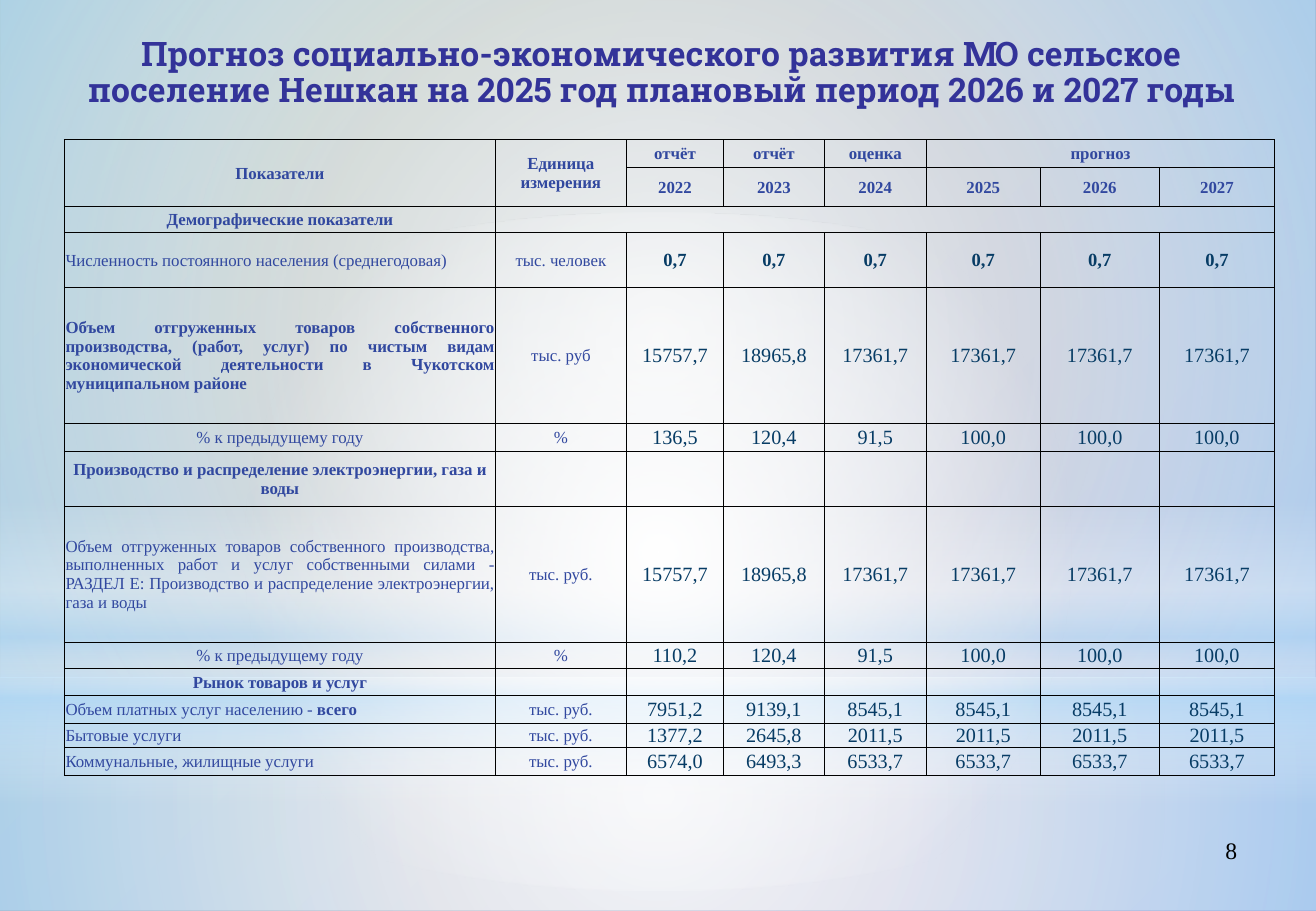
"""Builds the slide with the forecast table of the Neshkan settlement."""
from lxml import etree
from pptx import Presentation, util as u
from pptx.dml import color
from pptx.enum import shapes, text
from pptx.oxml import ns

HUES = {"title": "333399", "label": "31489F", "value": "073C65", "line": "000000",
        "white": "FFFFFF", "sky": "B4DCFA", "sage": "96AB94", "iris": "8488C4"}
TITLE = ("Прогноз социально-экономического развития МО сельское поселение "
         "Нешкан на 2025 год плановый период 2026 и 2027 годы")
PAGE = "8"
SERIF = "Times New Roman"
LEFT, MID, RIGHT, JUST = (text.PP_ALIGN.LEFT, text.PP_ALIGN.CENTER,
                          text.PP_ALIGN.RIGHT, text.PP_ALIGN.JUSTIFY)

COLS = [3.55, 1.08, 0.8, 0.83, 0.84, 0.94, 0.98, 0.95]
ROWS = [0.23, 0.31, 0.22, 0.45, 1.12, 0.23, 0.45, 1.12, 0.22, 0.22, 0.23, 0.19, 0.23]
MERGES = [(0, 0, 1, 0), (0, 1, 1, 1), (0, 5, 0, 7), (2, 1, 2, 7)]
HEADS = [
    ["Показатели", "Единица измерения", "отчёт", "отчёт", "оценка", "прогноз"],
    ["", "", "2022", "2023", "2024", "2025", "2026", "2027"],
]
SHARE = "% к предыдущему году"
BODY = [
    ("Демографические показатели", True, MID, "", []),
    ("Численность постоянного населения (среднегодовая)", False, LEFT,
     "тыс. человек", ["0,7"] * 6),
    ("Объем отгруженных товаров собственного производства, (работ, услуг) по чистым "
     "видам экономической деятельности в Чукотском муниципальном районе", True, JUST,
     "тыс. руб", ["15757,7", "18965,8"] + ["17361,7"] * 4),
    (SHARE, False, MID, "%", ["136,5", "120,4", "91,5"] + ["100,0"] * 3),
    ("Производство и распределение электроэнергии, газа и воды", True, MID, "", []),
    ("Объем отгруженных товаров собственного производства, выполненных работ и услуг "
     "собственными силами - РАЗДЕЛ E: Производство и распределение электроэнергии, "
     "газа и воды", False, JUST,
     "тыс. руб.", ["15757,7", "18965,8"] + ["17361,7"] * 4),
    (SHARE, False, MID, "%", ["110,2", "120,4", "91,5"] + ["100,0"] * 3),
    ("Рынок товаров и услуг", True, MID, "", []),
    ("Объем платных услуг населению - ", False, LEFT,
     "тыс. руб.", ["7951,2", "9139,1"] + ["8545,1"] * 4),
    ("Бытовые услуги", False, LEFT,
     "тыс. руб.", ["1377,2", "2645,8"] + ["2011,5"] * 4),
    ("Коммунальные, жилищные услуги", False, LEFT,
     "тыс. руб.", ["6574,0", "6493,3"] + ["6533,7"] * 4),
]
PEOPLE, PAID = 3, 10

RECT, OVAL = shapes.MSO_SHAPE.RECTANGLE, shapes.MSO_SHAPE.OVAL
GLOWS = [
    (RECT, 5.58, 1.92, True, [(0, "white", 91), (37, "white", 76), (100, "sky", 79)]),
    (RECT, 0, 5.58, True, [(0, "white", 89), (48, "white", 62), (100, "sky", 79)]),
    (RECT, 4.12, 2.5, False, [(0, "white", 0), (29, "white", 30), (45, "sky", 40),
                              (55, "white", 26), (65, "sky", 60), (100, "white", 0)]),
    (OVAL, 1.75, 5.58, True, [(0, "white", 100), (56, "white", 0)]),
]


def rgb(name):
    return color.RGBColor.from_string(HUES[name])


def sub(node, tag, **attrs):
    return etree.SubElement(node, ns.qn("a:" + tag), {k: str(v) for k, v in attrs.items()})


def put(par, words, size=10, hue="label", bold=False, align=MID, face=SERIF):
    par.alignment = align
    if not words:
        par._p.get_or_add_endParaRPr().set("sz", str(size * 100))
        return
    run = par.add_run()
    run.text = words
    font = run.font
    font.size, font.bold, font.name = u.Pt(size), bold, face
    font.color.rgb = rgb(hue)


def glow(slide, kind, top, high, round_, stops):
    shape = slide.shapes.add_shape(kind, 0, u.Inches(top), u.Inches(10.84), u.Inches(high))
    shape.shadow.inherit = False
    shape.line.fill.background()
    shape.fill.gradient()
    grad = shape._element.spPr.find(ns.qn("a:gradFill"))
    for child in list(grad):
        grad.remove(child)
    marks = sub(grad, "gsLst")
    for pos, hue, alpha in stops:
        mark = sub(marks, "gs", pos=pos * 1000)
        sub(sub(mark, "srgbClr", val=HUES[hue]), "alpha", val=alpha * 1000)
    if round_:
        sub(sub(grad, "path", path="circle"), "fillToRect", l=50000, t=50000, r=50000, b=50000)
    else:
        sub(grad, "lin", ang=90 * 60000, scaled=0)


def frame(cell):
    cell.margin_left = cell.margin_right = cell.margin_top = u.Inches(0.01)
    cell.margin_bottom = 0
    cell.vertical_anchor = text.MSO_ANCHOR.MIDDLE
    props = cell._tc.get_or_add_tcPr()
    for side in ("lnL", "lnR", "lnT", "lnB"):
        edge = sub(props, side, w=u.Pt(0.5))
        sub(sub(edge, "solidFill"), "srgbClr", val=HUES["line"])
    cell.fill.background()


def build_table(slide):
    grid = slide.shapes.add_table(len(ROWS), len(COLS), u.Inches(0.53), u.Inches(1.15),
                                  u.Inches(sum(COLS)), u.Inches(sum(ROWS))).table
    grid.first_row = grid.horz_banding = False
    for col, wide in zip(grid.columns, COLS):
        col.width = u.Inches(wide)
    for row, high in zip(grid.rows, ROWS):
        row.height = u.Inches(high)

    plan = {}
    for r, heads in enumerate(HEADS):
        for c, words in enumerate(heads):
            plan[r, c] = words, dict(bold=True)
    for r, (label, bold, align, unit, values) in enumerate(BODY, len(HEADS)):
        plan[r, 0] = label, dict(bold=bold, align=align)
        plan[r, 1] = unit, {}
        main = r == PEOPLE
        for c, value in enumerate(values, 2):
            plan[r, c] = value, dict(size=11 if main else 12, hue="value", bold=main)

    for r in range(len(ROWS)):
        for c in range(len(COLS)):
            cell = grid.cell(r, c)
            frame(cell)
            words, style = plan.get((r, c), ("", {}))
            put(cell.text_frame.paragraphs[0], words, **style)
    put(grid.cell(PAID, 0).text_frame.paragraphs[0], "всего", bold=True, align=LEFT)
    for top, left, low, right in MERGES:
        grid.cell(top, left).merge(grid.cell(low, right))


def main():
    deck = Presentation()
    deck.slide_width, deck.slide_height = u.Inches(10.84), u.Inches(7.5)
    slide = deck.slides.add_slide(deck.slide_layouts[5])
    back = slide.background.fill
    back.gradient()
    back.gradient_angle = 315
    for stop, hue in zip(back.gradient_stops, ("sage", "iris")):
        stop.color.rgb = rgb(hue)
    for item in GLOWS:
        glow(slide, *item)

    page = slide.shapes.add_textbox(u.Inches(7.76), u.Inches(6.83), u.Inches(2.53), u.Inches(0.52))
    page.text_frame.word_wrap = True
    put(page.text_frame.paragraphs[0], PAGE, size=14, hue="line", align=RIGHT)

    title = slide.shapes.title
    title.left, title.top = u.Inches(0.41), u.Inches(0.22)
    title.width, title.height = u.Inches(10.08), u.Inches(0.77)
    area = title.text_frame
    area.word_wrap, area.auto_size = True, text.MSO_AUTO_SIZE.NONE
    area.vertical_anchor = text.MSO_ANCHOR.MIDDLE
    area.paragraphs[0].line_spacing = 0.9
    put(area.paragraphs[0], TITLE, size=20, hue="title", bold=True, face="Roboto Slab")
    slide.shapes._spTree.append(title._element)

    build_table(slide)
    deck.save("out.pptx")


if __name__ == "__main__":
    main()
